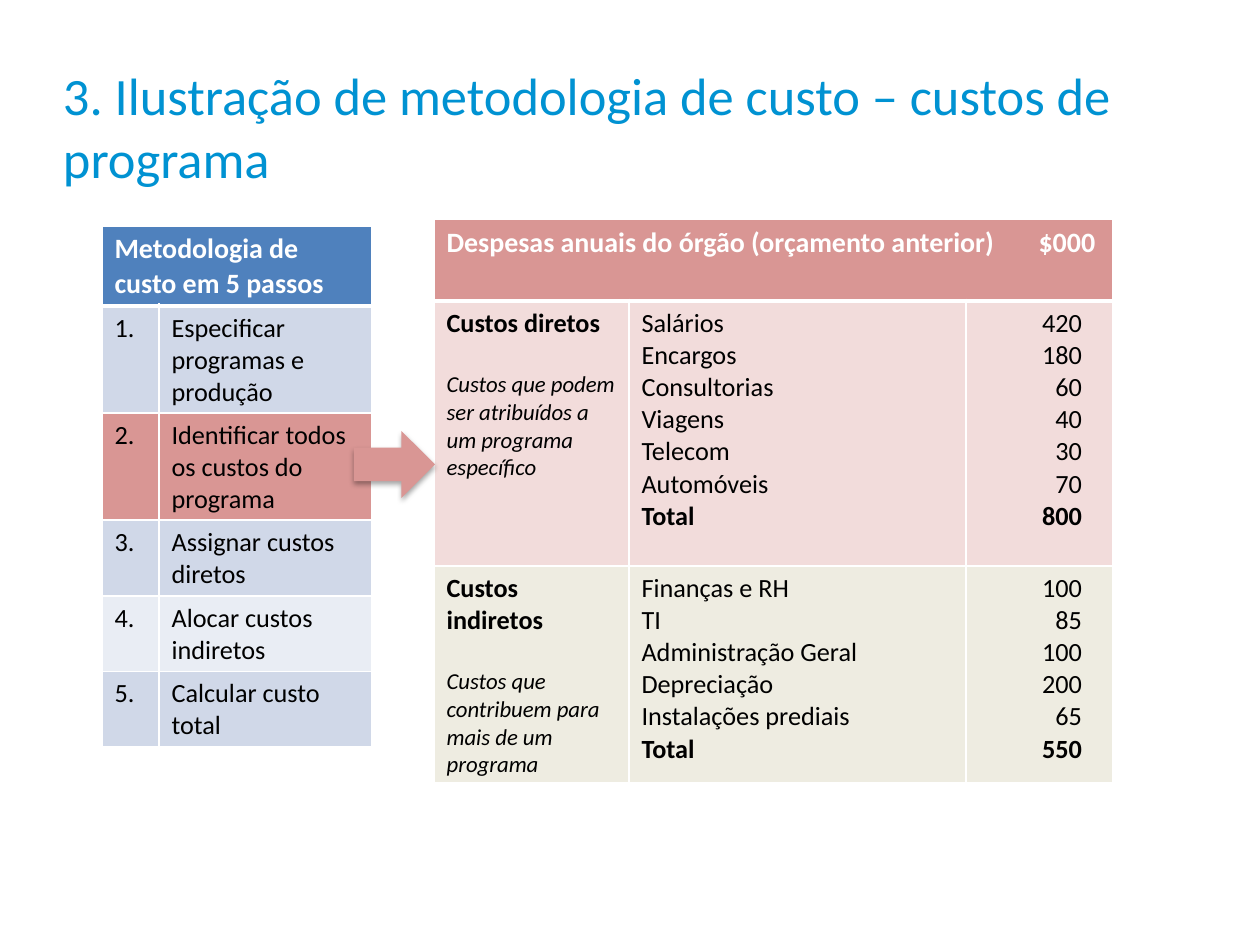
from lxml.etree import SubElement
from pptx import Presentation
from pptx.dml.color import RGBColor
from pptx.enum.shapes import MSO_SHAPE
from pptx.enum.text import PP_ALIGN
from pptx.oxml import parse_xml
from pptx.oxml.ns import nsdecls, qn
from pptx.util import Pt

WHITE = RGBColor(0xFF, 0xFF, 0xFF)
BLACK = RGBColor(0x00, 0x00, 0x00)
TITLE_BLUE = RGBColor(0x00, 0x92, 0xD2)
HEADER_BLUE = RGBColor(0x4F, 0x81, 0xBD)
BAND_DARK = RGBColor(0xD0, 0xD8, 0xE8)
BAND_LIGHT = RGBColor(0xE9, 0xED, 0xF4)
ROSE = RGBColor(0xD9, 0x96, 0x94)
PALE_ROSE = RGBColor(0xF2, 0xDC, 0xDB)
PALE_SAND = RGBColor(0xEE, 0xEC, 0xE1)

STEPS = [
    ("Especificar programas e produção", BAND_DARK),
    ("Identificar todos os custos do programa", ROSE),
    ("Assignar custos diretos", BAND_DARK),
    ("Alocar custos indiretos", BAND_LIGHT),
    ("Calcular custo total", BAND_DARK),
]
COSTS = [
    ("Custos diretos", "Custos que podem ser atribuídos a um programa específico", PALE_ROSE,
     [("Salários", 420), ("Encargos", 180), ("Consultorias", 60), ("Viagens", 40),
      ("Telecom", 30), ("Automóveis", 70), ("Total", 800)]),
    ("Custos indiretos", "Custos que contribuem para mais de um programa", PALE_SAND,
     [("Finanças e RH", 100), ("TI", 85), ("Administração Geral", 100), ("Depreciação", 200),
      ("Instalações prediais", 65), ("Total", 550)]),
]


def px(length):
    return round(length * 914400 / 126)


def line(text, size=15, color=BLACK, bold=False, italic=False, align=PP_ALIGN.LEFT,
         before=0, after=0, tab=None):
    return dict(text=text, size=size, color=color, bold=bold, italic=italic,
                align=align, before=before, after=after, tab=tab)


class SlideBuilder:
    font = "Calibri"

    def __init__(self, page):
        self.page = page

    def fill_text(self, frame, lines):
        frame.word_wrap = True
        for index, style in enumerate(lines):
            para = frame.add_paragraph() if index else frame.paragraphs[0]
            if style["tab"]:
                tabs = SubElement(para._p.get_or_add_pPr(), qn("a:tabLst"))
                SubElement(tabs, qn("a:tab"), pos=str(px(style["tab"])), algn="l")
            para.alignment = style["align"]
            para.space_before = Pt(style["before"])
            para.space_after = Pt(style["after"])
            span = para.add_run()
            span.text = style["text"]
            span.font.name = self.font
            span.font.size = Pt(style["size"])
            span.font.bold = style["bold"]
            span.font.italic = style["italic"]
            span.font.color.rgb = style["color"]

    def text(self, left, top, width, height, lines):
        box = self.page.shapes.add_textbox(px(left), px(top), px(width), px(height))
        frame = box.text_frame
        frame.margin_left = frame.margin_right = frame.margin_top = frame.margin_bottom = 0
        self.fill_text(frame, lines)

    def borders(self, cell, header):
        properties = cell._tc.get_or_add_tcPr()
        widths = {"lnL": 1, "lnR": 1, "lnT": 1, "lnB": 3 if header else 1}
        for index, (side, width) in enumerate(widths.items()):
            border = parse_xml(
                f'<a:{side} {nsdecls("a")} w="{Pt(width)}"><a:solidFill>'
                f'<a:srgbClr val="{WHITE}"/></a:solidFill></a:{side}>')
            properties.insert(index, border)

    def table(self, left, top, columns, heights, header, header_fill, rows):
        frame = self.page.shapes.add_table(
            len(heights), len(columns), px(left), px(top), px(sum(columns)), px(sum(heights)))
        table = frame.table
        for column, width in zip(table.columns, columns):
            column.width = px(width)
        for row, height in zip(table.rows, heights):
            row.height = px(height)
        table.cell(0, 0).merge(table.cell(0, len(columns) - 1))
        self.fill_text(table.cell(0, 0).text_frame, [header])
        fills = [header_fill] + [fill for fill, _ in rows]
        for row_index, fill in enumerate(fills):
            for cell in table.rows[row_index].cells:
                cell.fill.solid()
                cell.fill.fore_color.rgb = fill
                self.borders(cell, row_index == 0)
        for row_index, (_, contents) in enumerate(rows, 1):
            for column_index, lines in enumerate(contents):
                self.fill_text(table.cell(row_index, column_index).text_frame, lines)
        return table

    def arrow(self, left, top, width, height, color):
        shape = self.page.shapes.add_shape(
            MSO_SHAPE.RIGHT_ARROW, px(left), px(top), px(width), px(height))
        shape.fill.solid()
        shape.fill.fore_color.rgb = color
        shape.line.fill.background()
        shape.shadow.inherit = False
        effects = shape._element.spPr.find(qn("a:effectLst"))
        effects.append(parse_xml(
            f'<a:outerShdw {nsdecls("a")} blurRad="{Pt(3.1)}" dist="{Pt(1.8)}" dir="5400000" '
            f'rotWithShape="0"><a:srgbClr val="{BLACK}"><a:alpha val="35000"/>'
            '</a:srgbClr></a:outerShdw>'))


def cost_row(name, note, fill, items):
    labels = [line(label, bold=label == "Total") for label, _ in items]
    values = [line(str(value), bold=label == "Total", align=PP_ALIGN.RIGHT)
              for label, value in items]
    heading = [line(name, bold=True), line(note, size=13, italic=True, before=18)]
    return fill, [heading, labels, values]


def main():
    deck = Presentation()
    deck.slide_width, deck.slide_height = px(1260), px(945)
    builder = SlideBuilder(deck.slides.add_slide(deck.slide_layouts[6]))

    builder.text(63, 63, 1134, 127, [
        line("3. Ilustração de metodologia de custo – custos de programa",
             size=30, color=TITLE_BLUE, after=6)])

    costs = builder.table(
        434, 219, [195, 337, 147], [82, 265, 216],
        line("Despesas anuais do órgão (orçamento anterior)\t$000",
             size=16, color=WHITE, bold=True, tab=592),
        ROSE, [cost_row(*group) for group in COSTS])
    for row_index in range(1, len(COSTS) + 1):
        costs.cell(row_index, 2).margin_right = px(31)

    builder.table(
        102, 226, [57, 213], [79, 107, 107, 75, 75, 75],
        line("Metodologia de custo em 5 passos", size=16, color=WHITE, bold=True),
        HEADER_BLUE,
        [(fill, [[line(f"{number}.")], [line(step)]])
         for number, (step, fill) in enumerate(STEPS, 1)])

    builder.arrow(354, 431, 81, 67, ROSE)
    deck.save("out.pptx")


if __name__ == "__main__":
    main()
